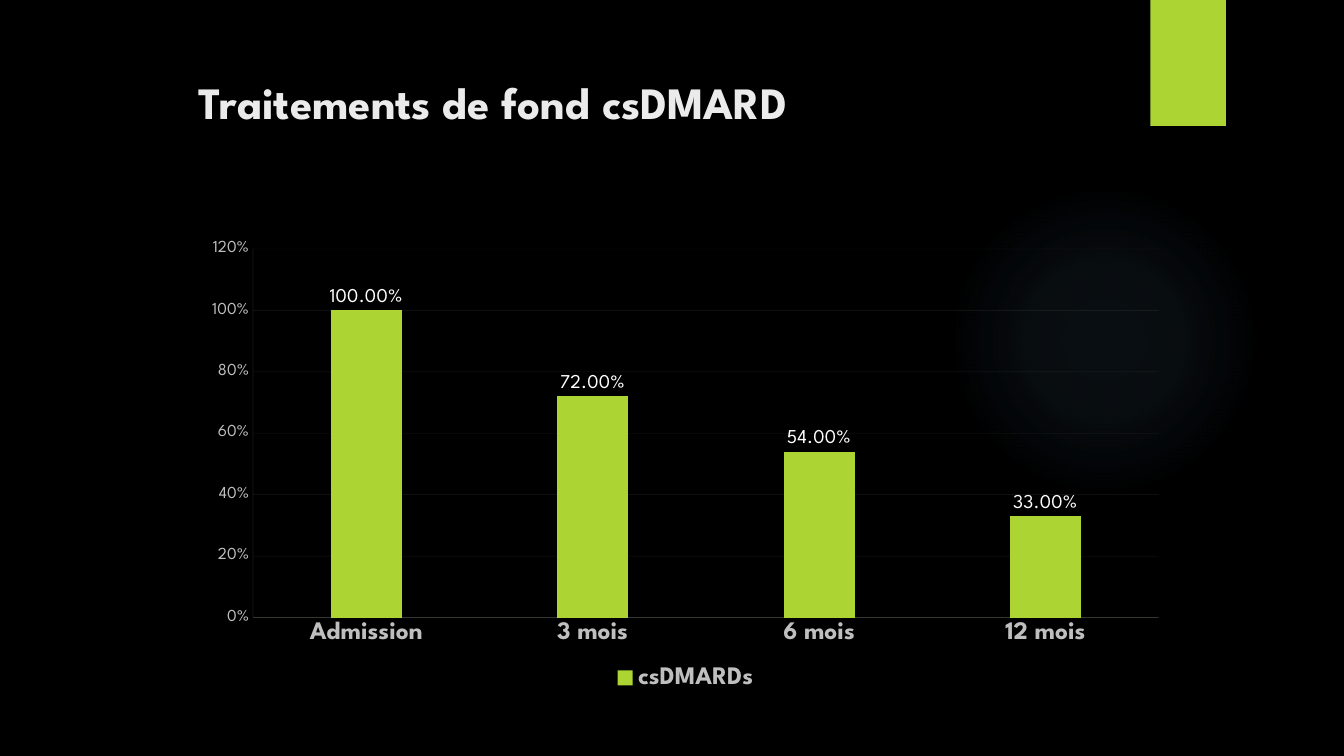
from lxml import etree
from pptx import Presentation
from pptx.chart.data import CategoryChartData
from pptx.dml.color import RGBColor
from pptx.enum.chart import XL_CHART_TYPE as ChartType, XL_LABEL_POSITION as LabelPosition
from pptx.enum.chart import XL_LEGEND_POSITION as LegendPosition, XL_TICK_MARK as TickMark
from pptx.enum.shapes import MSO_SHAPE as Shape
from pptx.enum.text import MSO_ANCHOR as Anchor, PP_ALIGN as Align
from pptx.oxml import parse_xml
from pptx.oxml.ns import nsdecls, qn
from pptx.util import Pt

FONT = "League Spartan"
GREEN, PALE_GREEN, GREY, WHITE = "ACD433", "EEF6D6", "BFBFBF", "FFFFFF"


def paint(color_format, color, opacity=100):
    """Set a colour; opacity is in percent."""
    color_format.rgb = RGBColor.from_string(color)
    if opacity < 100:
        for element in color_format._xFill.iter(qn("a:srgbClr")):
            etree.SubElement(element, qn("a:alpha"), val=str(opacity * 1000))


def style_font(font, size, color, bold=False):
    font.name, font.size, font.bold = FONT, Pt(size), bold
    paint(font.color, color)


presentation = Presentation()
presentation.slide_width, presentation.slide_height = Pt(960), Pt(540)
slide = presentation.slides.add_slide(presentation.slide_layouts[5])
slide.background.fill.solid()
paint(slide.background.fill.fore_color, "000000")

# Soft glow and green tab
glow = slide.shapes.add_shape(Shape.OVAL, Pt(677.5), Pt(131.8), Pt(221.8), Pt(221.8))
tab = slide.shapes.add_shape(Shape.RECTANGLE, Pt(821.7), Pt(0), Pt(54), Pt(90))
for shape in (glow, tab):
    shape.shadow.inherit = False
    shape.line.fill.background()
tab.fill.solid()
paint(tab.fill.fore_color, GREEN)
stops = "".join(
    f'<a:gs pos="{position * 1000}"><a:srgbClr val="7AC4F0">'
    f'<a:alpha val="{opacity * 1000}"/></a:srgbClr></a:gs>'
    for position, opacity in ((0, 7), (36, 6), (69, 0)))
glow_fill = parse_xml(
    f'<a:gradFill {nsdecls("a")}><a:gsLst>{stops}</a:gsLst><a:path path="circle">'
    '<a:fillToRect l="50000" t="50000" r="50000" b="50000"/></a:path></a:gradFill>')
glow._element.spPr.find(qn("a:prstGeom")).addnext(glow_fill)

# Title
title = slide.shapes.title
title.left, title.top, title.width, title.height = Pt(134.6), Pt(49.7), Pt(740.9), Pt(110.2)
title.text_frame.text = "Traitements de fond csDMARD"
title.text_frame.vertical_anchor = Anchor.TOP
paragraph = title.text_frame.paragraphs[0]
paragraph.alignment = Align.LEFT
style_font(paragraph.runs[0].font, 32, "EBEBEB", bold=True)

# Column chart
data = CategoryChartData(number_format="0.00%")
data.categories = ["Admission", "3 mois", "6 mois", "12 mois"]
data.add_series("csDMARDs", [1, 0.72, 0.54, 0.33])
chart = slide.shapes.add_chart(ChartType.COLUMN_CLUSTERED, Pt(137.5), Pt(165.6),
                               Pt(704.2), Pt(330.5), data).chart
chart.has_title = False
style_font(chart.font, 10, WHITE)

chart.has_legend = True
chart.legend.position = LegendPosition.BOTTOM
chart.legend.include_in_layout = False
style_font(chart.legend.font, 18, GREY, bold=True)

category_axis, value_axis = chart.category_axis, chart.value_axis
style_font(category_axis.tick_labels.font, 18, GREY, bold=True)
style_font(value_axis.tick_labels.font, 12, GREY)
value_axis.tick_labels.number_format = "0%"
value_axis.tick_labels.number_format_is_linked = False
value_axis.minimum_scale, value_axis.maximum_scale, value_axis.major_unit = 0, 1.2, 0.2
for axis in (category_axis, value_axis):
    axis.major_tick_mark = axis.minor_tick_mark = TickMark.NONE
for line, opacity in ((category_axis.format.line, 25), (value_axis.format.line, 30),
                      (value_axis.major_gridlines.format.line, 10)):
    line.width = Pt(0.25)
    line.fill.solid()
    paint(line.fill.fore_color, PALE_GREEN, opacity)

plot = chart.plots[0]
plot.gap_width, plot.overlap, plot.vary_by_categories = 219, -27, False
columns = plot.series[0]
columns.format.fill.solid()
paint(columns.format.fill.fore_color, GREEN)
labels = columns.data_labels
labels.show_value = True
labels.position = LabelPosition.OUTSIDE_END
labels.number_format, labels.number_format_is_linked = "0.00%", False
style_font(labels.font, 14, WHITE)

presentation.save("out.pptx")
